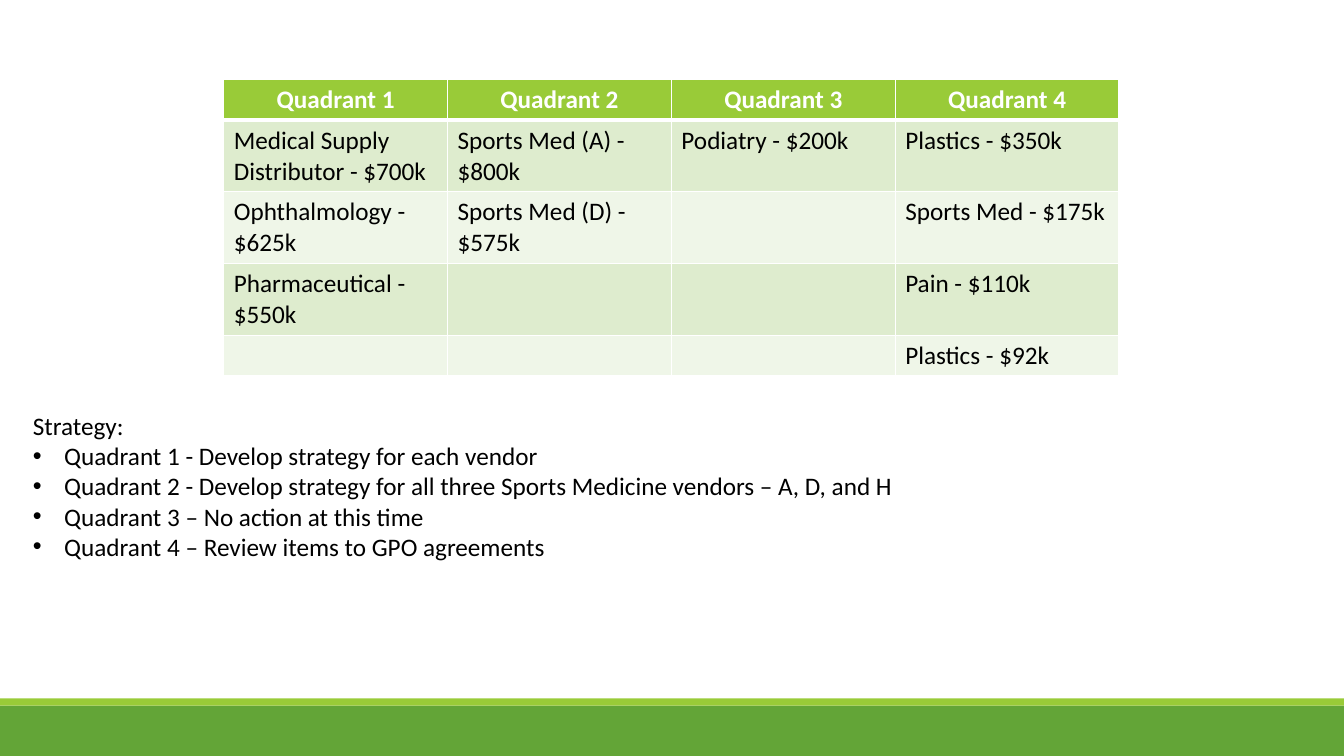
from typing import NamedTuple

from lxml import etree
from pptx import Presentation
from pptx.dml.color import RGBColor
from pptx.enum.shapes import MSO_SHAPE
from pptx.enum.text import MSO_AUTO_SIZE, PP_ALIGN
from pptx.oxml.ns import qn
from pptx.util import Cm, Pt

RECTANGLE = MSO_SHAPE.RECTANGLE
CENTER, LEFT = PP_ALIGN.CENTER, PP_ALIGN.LEFT
GROW_TO_TEXT = MSO_AUTO_SIZE.SHAPE_TO_FIT_TEXT

WHITE = RGBColor(0xFF, 0xFF, 0xFF)
BLACK = RGBColor(0x00, 0x00, 0x00)
GREEN = RGBColor(0x63, 0xA5, 0x37)
LIME = RGBColor(0x99, 0xCB, 0x38)
BANDS = (RGBColor(0xDE, 0xEC, 0xCE), RGBColor(0xEF, 0xF6, 0xE8))

FONT = "Calibri"
TEXT_SIZE = Pt(18)
SLIDE_WIDTH, SLIDE_HEIGHT = Cm(33.87), Cm(19.05)
COLUMN_WIDTH, ROW_HEIGHT = Cm(5.64), Cm(1.03)
BULLET_INDENT = Cm(0.79)


class FooterBand(NamedTuple):
    top: Cm
    height: Cm
    color: RGBColor


class Quadrant(NamedTuple):
    title: str
    vendors: tuple[str, ...]


FOOTER_BANDS = (
    FooterBand(Cm(17.78), Cm(1.27), GREEN),
    FooterBand(Cm(17.6), Cm(0.18), LIME),
)
QUADRANTS = (
    Quadrant("Quadrant 1", ("Medical Supply Distributor - $700k",
                            "Ophthalmology - $625k",
                            "Pharmaceutical - $550k")),
    Quadrant("Quadrant 2", ("Sports Med (A) - $800k", "Sports Med (D) - $575k")),
    Quadrant("Quadrant 3", ("Podiatry - $200k",)),
    Quadrant("Quadrant 4", ("Plastics - $350k", "Sports Med - $175k",
                            "Pain - $110k", "Plastics - $92k")),
)
STRATEGY = (
    "Quadrant 1 - Develop strategy for each vendor",
    "Quadrant 2 - Develop strategy for all three Sports Medicine vendors – A, D, and H",
    "Quadrant 3 – No action at this time",
    "Quadrant 4 – Review items to GPO agreements",
)


def style_text(paragraph, color: RGBColor, bold: bool = False) -> None:
    font = paragraph.font
    font.name, font.size, font.bold = FONT, TEXT_SIZE, bold
    font.color.rgb = color
    for run in paragraph.runs:
        run.font.name, run.font.size, run.font.bold = FONT, TEXT_SIZE, bold
        run.font.color.rgb = color


def add_footer_band(slide, band: FooterBand) -> None:
    bar = slide.shapes.add_shape(RECTANGLE, 0, band.top, SLIDE_WIDTH, band.height)
    bar.shadow.inherit = False
    bar.fill.solid()
    bar.fill.fore_color.rgb = band.color
    bar.line.fill.background()


def set_borders(cell, top: Pt, bottom: Pt) -> None:
    """Draw white borders; lines must precede the fill in the cell properties."""
    properties = cell._tc.get_or_add_tcPr()
    widths = {"a:lnL": Pt(1), "a:lnR": Pt(1), "a:lnT": top, "a:lnB": bottom}
    for position, (tag, width) in enumerate(widths.items()):
        line = etree.Element(qn(tag), w=str(int(width)))
        fill = etree.SubElement(line, qn("a:solidFill"))
        etree.SubElement(fill, qn("a:srgbClr"), val=str(WHITE))
        properties.insert(position, line)


def add_quadrant_table(slide, quadrants: tuple[Quadrant, ...]) -> None:
    row_count = 1 + max(len(quadrant.vendors) for quadrant in quadrants)
    table = slide.shapes.add_table(
        row_count, len(quadrants), Cm(5.64), Cm(2),
        COLUMN_WIDTH * len(quadrants), ROW_HEIGHT * row_count).table
    for row in table.rows:
        row.height = ROW_HEIGHT
    for column, quadrant in enumerate(quadrants):
        table.columns[column].width = COLUMN_WIDTH
        entries = (quadrant.title, *quadrant.vendors)
        for row in range(row_count):
            cell = table.cell(row, column)
            is_header = row == 0
            cell.fill.solid()
            cell.fill.fore_color.rgb = LIME if is_header else BANDS[(row - 1) % 2]
            set_borders(cell, top=Pt(3 if row == 1 else 1),
                        bottom=Pt(3 if is_header else 1))
            paragraph = cell.text_frame.paragraphs[0]
            if row < len(entries):
                paragraph.text = entries[row]
            paragraph.alignment = CENTER if is_header else LEFT
            style_text(paragraph, WHITE if is_header else BLACK, bold=is_header)


def add_bullet(paragraph) -> None:
    properties = paragraph._p.get_or_add_pPr()
    properties.set("marL", str(int(BULLET_INDENT)))
    properties.set("indent", str(-int(BULLET_INDENT)))
    bullet_font = etree.Element(qn("a:buFont"), typeface="Arial")
    bullet = etree.Element(qn("a:buChar"), char="•")
    properties.insert(0, bullet_font)
    properties.insert(1, bullet)


def add_strategy(slide, heading: str, actions: tuple[str, ...]) -> None:
    frame = slide.shapes.add_textbox(
        Cm(0.58), Cm(10.21), Cm(31.75), Cm(4.11)).text_frame
    frame.word_wrap = True
    frame.auto_size = GROW_TO_TEXT
    frame.text = "\n".join((heading, *actions))
    for paragraph in frame.paragraphs:
        style_text(paragraph, BLACK)
    for paragraph in frame.paragraphs[1:]:
        add_bullet(paragraph)


def main() -> None:
    presentation = Presentation()
    presentation.slide_width = SLIDE_WIDTH
    presentation.slide_height = SLIDE_HEIGHT
    slide = presentation.slides.add_slide(presentation.slide_layouts[6])

    # Footer
    for band in FOOTER_BANDS:
        add_footer_band(slide, band)

    # Vendors by quadrant, then the strategy for each
    add_quadrant_table(slide, QUADRANTS)
    add_strategy(slide, "Strategy:", STRATEGY)

    presentation.save("out.pptx")


if __name__ == "__main__":
    main()
